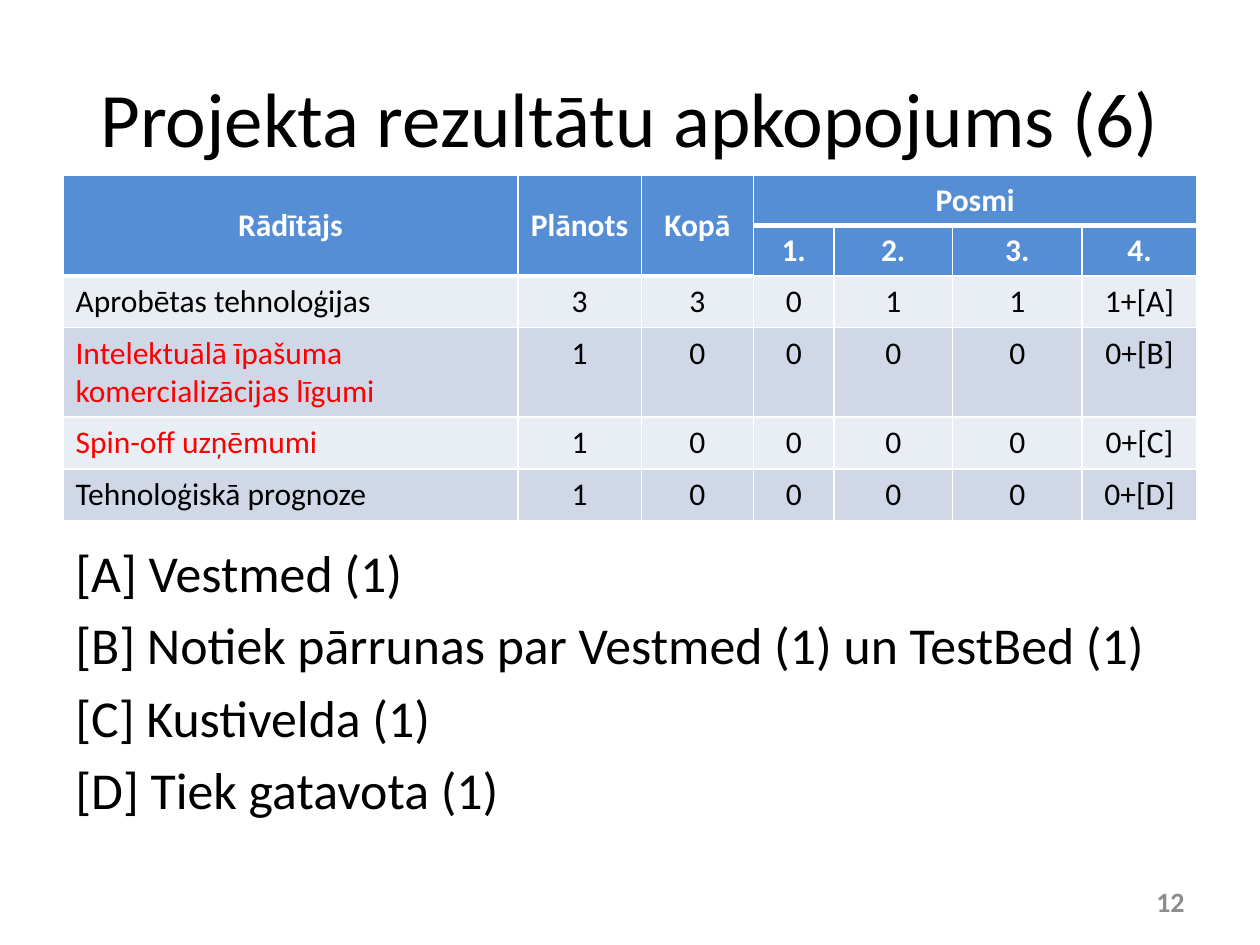
from lxml.etree import SubElement
from pptx import Presentation
from pptx.dml.color import RGBColor
from pptx.enum.text import MSO_ANCHOR, PP_ALIGN
from pptx.oxml.ns import qn
from pptx.util import Inches, Pt

COLUMNS = [3.61, 0.98, 0.89, 0.64, 0.94, 1.03, 0.91]
ROWS = [0.4, 0.4, 0.41, 0.71, 0.41, 0.41]
HEADER = [
    ["Rādītājs", "Plānots", "Kopā", "Posmi", "", "", ""],
    ["", "", "", "1.", "2.", "3.", "4."],
]
RESULTS = [
    ["Aprobētas tehnoloģijas", "3", "3", "0", "1", "1", "1+[A]"],
    ["Intelektuālā īpašuma komercializācijas līgumi", "1", "0", "0", "0", "0", "0+[B]"],
    ["Spin-off uzņēmumi", "1", "0", "0", "0", "0", "0+[C]"],
    ["Tehnoloģiskā prognoze", "1", "0", "0", "0", "0", "0+[D]"],
]
UNMET = {"Intelektuālā īpašuma komercializācijas līgumi", "Spin-off uzņēmumi"}
NOTES = [
    "[A] Vestmed (1)",
    "[B] Notiek pārrunas par Vestmed (1) un TestBed (1)",
    "[C] Kustivelda (1)",
    "[D] Tiek gatavota (1)",
]


def rgb(value):
    return RGBColor.from_string(value)


class Deck:
    font = "Calibri"
    black, white, red, grey = "000000", "FFFFFF", "FF0000", "8C8C8C"
    header_fill = "558ED5"
    bands = ["E9EDF4", "D0D8E8"]

    def __init__(self, prs):
        self.s = prs.slides.add_slide(prs.slide_layouts[6])

    def run(self, p, text, size, color, bold=False):
        r = p.add_run()
        r.text = text
        r.font.name = self.font
        r.font.size = Pt(size)
        r.font.bold = bold
        r.font.color.rgb = rgb(color)

    def text(self, box, lines, size, color=black, bold=False,
             align=PP_ALIGN.LEFT, anchor=MSO_ANCHOR.TOP, gap=0):
        tf = self.s.shapes.add_textbox(*map(Inches, box)).text_frame
        tf.word_wrap = True
        tf.vertical_anchor = anchor
        for i, line in enumerate(lines):
            p = tf.add_paragraph() if i else tf.paragraphs[0]
            p.alignment = align
            p.space_before = Pt(gap if i else 0)
            self.run(p, line, size, color, bold)

    def borders(self, cell, bottom):
        tc_pr = cell._tc.get_or_add_tcPr()
        for side, width in (("L", 1), ("R", 1), ("T", 1), ("B", bottom)):
            ln = SubElement(tc_pr, qn(f"a:ln{side}"), w=str(Pt(width)))
            fill = SubElement(ln, qn("a:solidFill"))
            SubElement(fill, qn("a:srgbClr"), val=self.white)

    def cell(self, cell, text, fill, color, header, align, bottom):
        self.borders(cell, bottom)
        cell.fill.solid()
        cell.fill.fore_color.rgb = rgb(fill)
        cell.vertical_anchor = MSO_ANCHOR.MIDDLE if header else MSO_ANCHOR.TOP
        if text:
            p = cell.text_frame.paragraphs[0]
            p.alignment = align
            self.run(p, text, 18, color, header)

    def table(self, left, top):
        box = (left, top, sum(COLUMNS), sum(ROWS))
        table = self.s.shapes.add_table(
            len(ROWS), len(COLUMNS), *map(Inches, box)).table
        for column, width in zip(table.columns, COLUMNS):
            column.width = Inches(width)
        for row, height in zip(table.rows, ROWS):
            row.height = Inches(height)

        for i, values in enumerate(HEADER + RESULTS):
            header = i < len(HEADER)
            fill = self.header_fill if header else self.bands[i % 2]
            for j, value in enumerate(values):
                color = self.white if header else self.red if value in UNMET else self.black
                align = PP_ALIGN.CENTER if header or j else PP_ALIGN.LEFT
                bottom = 3 if i == 0 or (i == 1 and j < 3) else 1
                self.cell(table.cell(i, j), value, fill, color, header, align, bottom)

        # Header cells that span rows or columns
        for j in range(3):
            table.cell(0, j).merge(table.cell(1, j))
        table.cell(0, 3).merge(table.cell(0, 6))


def main():
    prs = Presentation()
    prs.slide_width, prs.slide_height = Inches(10), Inches(7.5)
    deck = Deck(prs)

    # Title
    deck.text((0.5, 0.3, 9, 1.25), ["Projekta rezultātu apkopojums (6)"], 44,
              align=PP_ALIGN.CENTER, anchor=MSO_ANCHOR.MIDDLE)
    # Results by stage
    deck.table(0.5, 1.39)
    # Slide number
    deck.text((7.17, 6.95, 2.33, 0.4), ["12"], 16, deck.grey, True,
              PP_ALIGN.RIGHT, MSO_ANCHOR.MIDDLE)
    # Notes to the table
    deck.text((0.5, 4.24, 9.22, 2.46), NOTES, 29.6, gap=5.9)

    prs.save("out.pptx")


if __name__ == "__main__":
    main()
